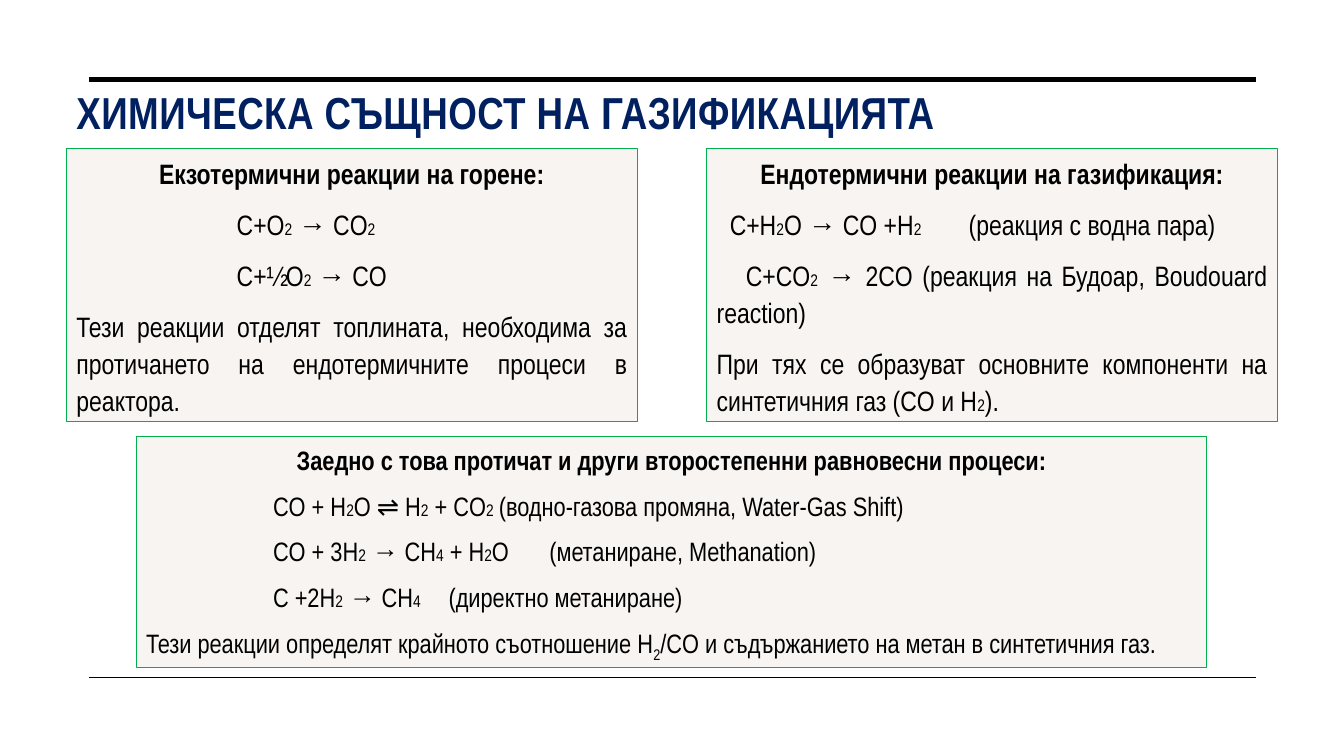
from lxml.etree import SubElement
from pptx import Presentation
from pptx.dml.color import RGBColor
from pptx.enum.shapes import MSO_CONNECTOR, MSO_SHAPE
from pptx.enum.text import MSO_ANCHOR, MSO_AUTO_SIZE, PP_ALIGN
from pptx.oxml.ns import qn
from pptx.util import Inches, Pt

FONT = "Arial Narrow"
BLACK, NAVY, GREEN, CREAM = "000000", "002060", "00B050", "F8F4F1"
SMALL_DIGIT = 12


def color(hex_text):
    return RGBColor.from_string(hex_text)


def add_run(paragraph, text, size, bold=False, ink=BLACK):
    run = paragraph.add_run()
    run.text = text
    font = run.font
    font.name, font.size, font.bold = FONT, Pt(size), bold
    font.color.rgb = color(ink)
    return run


def write(paragraph, text, size=20, bold=False, ink=BLACK, align=PP_ALIGN.JUSTIFY,
          spacing=1.1, before=10, indent=0, tab=None, lowered=False):
    """Write text; an underscore marks the next digit as an index, lowered or just small."""
    paragraph.alignment = align
    paragraph.line_spacing = spacing
    paragraph.space_before = Pt(before)
    properties = paragraph._p.get_or_add_pPr()
    properties.set("marL", "0")
    properties.set("indent", str(Inches(indent)))
    if tab:
        stops = SubElement(properties, qn("a:tabLst"))
        SubElement(stops, qn("a:tab"), pos=str(Inches(tab)), algn="l")
    first, *indexed = text.split("_")
    add_run(paragraph, first, size, bold, ink)
    for piece in indexed:
        index = add_run(paragraph, piece[0], size if lowered else SMALL_DIGIT, bold, ink)
        if lowered:
            index.font._element.set("baseline", "-25000")
        if piece[1:]:
            add_run(paragraph, piece[1:], size, bold, ink)


def add_rule(slide, y, width):
    rule = slide.shapes.add_connector(
        MSO_CONNECTOR.STRAIGHT, Inches(0.88), Inches(y), Inches(12.46), Inches(y))
    rule.line.color.rgb = color(BLACK)
    rule.line.width = Pt(width)
    SubElement(rule._element.spPr, qn("a:effectLst"))


def add_title(slide, text):
    title = slide.shapes.add_textbox(Inches(0.66), Inches(0.75), Inches(11.69), Inches(1.43))
    frame = title.text_frame
    frame.word_wrap = True
    frame.margin_top = Inches(0.09)
    heading = frame.paragraphs[0]
    write(heading, text, size=32, bold=True, ink=NAVY, align=PP_ALIGN.LEFT,
          spacing=1.0, before=0)
    heading.runs[0].font._element.set("spc", "30")


def add_panel(slide, left, top, width, height, heading, lines, **base):
    """Add a framed box with a centred heading and lines given as (text, format)."""
    panel = slide.shapes.add_shape(
        MSO_SHAPE.RECTANGLE, Inches(left), Inches(top), Inches(width), Inches(height))
    panel.shadow.inherit = False
    panel.fill.solid()
    panel.fill.fore_color.rgb = color(CREAM)
    panel.line.color.rgb = color(GREEN)
    panel.line.width = Pt(0.75)
    frame = panel.text_frame
    frame.word_wrap = True
    frame.auto_size = MSO_AUTO_SIZE.SHAPE_TO_FIT_TEXT
    frame.vertical_anchor = MSO_ANCHOR.MIDDLE
    write(frame.paragraphs[0], heading, bold=True, align=PP_ALIGN.CENTER,
          **{**base, "spacing": 1.1})
    for text, layout in lines:
        write(frame.add_paragraph(), text, **base, **layout)


def main():
    deck = Presentation()
    deck.slide_width, deck.slide_height = Inches(13.33), Inches(7.5)
    slide = deck.slides.add_slide(deck.slide_layouts[6])

    add_rule(slide, 0.79, 3.5)
    add_rule(slide, 6.72, 1)
    add_title(slide, "ХИМИЧЕСКА СЪЩНОСТ НА ГАЗИФИКАЦИЯТА")

    add_panel(slide, 7.01, 1.47, 5.66, 2.71, "Ендотермични реакции на газификация:", [
        ("C+H_2O → CO +H_2\t(реакция с водна пара)", {"indent": 0.13, "tab": 2.21}),
        ("C+CO_2 → 2CO (реакция на Будоар, Boudouard reaction)", {"indent": 0.29}),
        ("При тях се образуват основните компоненти на синтетичния газ (CO и H_2).", {}),
    ])
    add_panel(slide, 0.66, 1.47, 5.66, 2.71, "Екзотермични реакции на горене:", [
        ("C+O_2 → CO_2", {"indent": 1.59}),
        ("C+½O_2 → CO", {"indent": 1.59}),
        ("Тези реакции отделят топлината, необходима за протичането на "
         "ендотермичните процеси в реактора.", {}),
    ])
    add_panel(
        slide, 1.35, 4.33, 10.62, 2.29,
        "Заедно с това протичат и други второстепенни равновесни процеси:", [
            ("CO + H_2O ⇌ H_2 + CO_2\t(водно-газова промяна, Water-Gas Shift)",
             {"indent": 1.26, "tab": 3.98}),
            ("CO + 3H_2 → CH_4 + H_2O\t(метаниране, Methanation)",
             {"indent": 1.26, "tab": 4.18}),
            ("C +2H_2 → CH_4\t(директно метаниране)", {"indent": 1.26, "tab": 4.3}),
            ("Тези реакции определят крайното съотношение H_2/CO и съдържанието "
             "на метан в синтетичния газ.", {"lowered": True}),
        ], size=19, spacing=1.0)

    deck.save("out.pptx")


if __name__ == "__main__":
    main()
